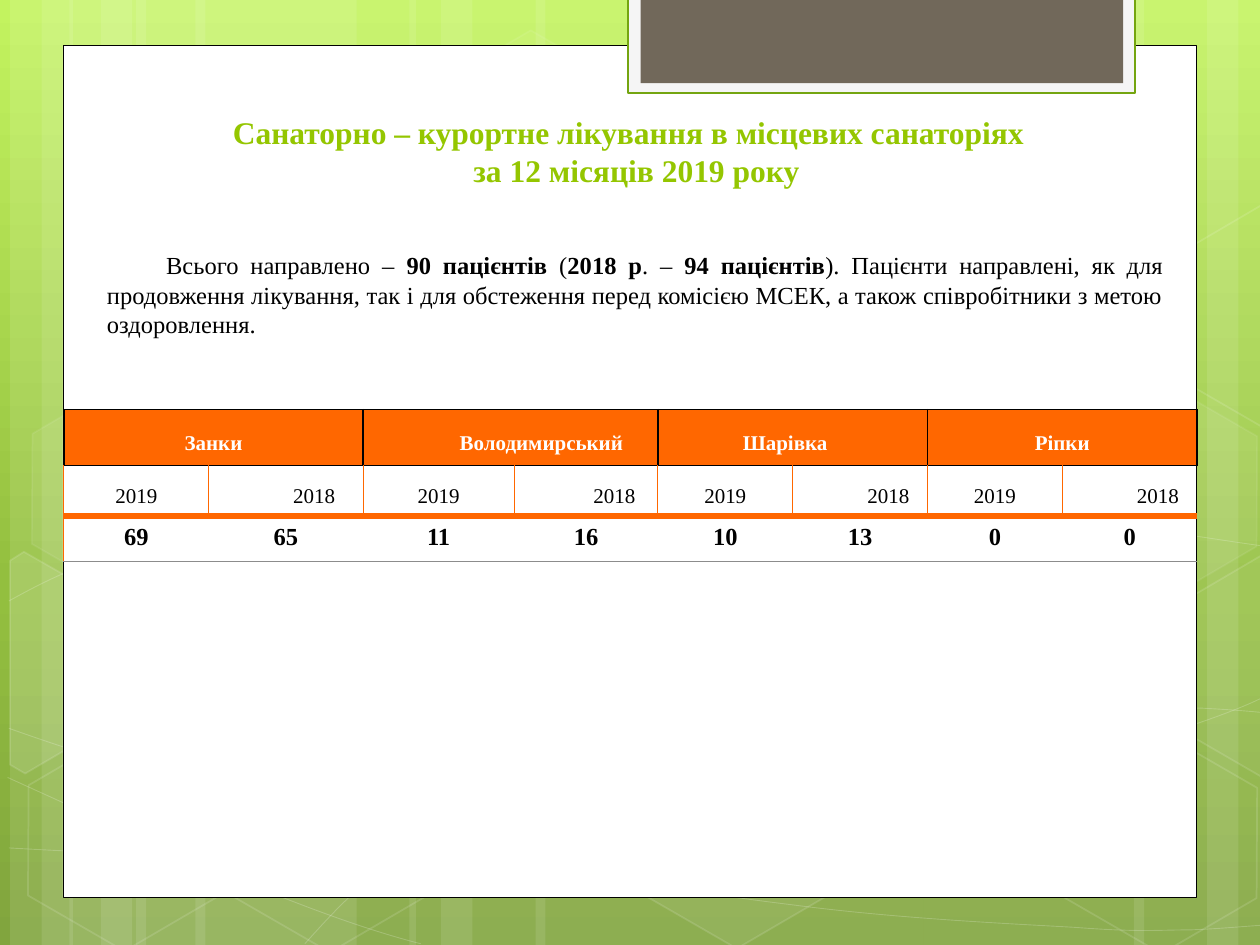
"""Build the slide on sanatorium treatment: green backdrop, white panel, summary and table."""
import copy
import dataclasses

import lxml.etree
import pptx
import pptx.dml.color
import pptx.enum.shapes
import pptx.enum.text
import pptx.oxml.ns
import pptx.util

qn = pptx.oxml.ns.qn
SHAPE = pptx.enum.shapes.MSO_SHAPE
ALIGN = pptx.enum.text.PP_ALIGN
ANCHOR = pptx.enum.text.MSO_ANCHOR
COLUMNS, ROWS = 100, 75


@dataclasses.dataclass(frozen=True)
class Theme:
    font: str = "Times New Roman"
    title_size: int = 18
    body_size: int = 14
    table_size: int = 12
    white: str = "FFFFFF"
    black: str = "000000"
    grey: str = "8C8C8C"
    green: str = "94C600"
    orange: str = "FF6700"
    tab_rim: str = "F5F5F5"
    tab_line: str = "74A510"
    tab: str = "71685A"
    backdrop: tuple = ((0, "C3F35F"), (0.62, "93BF3F"), (1, "81A53E"))


THEME = Theme()

STRIPES = [(10.8, 17.5), (0.8, 5), (3.3, 8.3), (15.5, 17.5), (5.5, 5), (8, 8.3),
           (73.3, 17.5), (95.8, 5), (90, 8.3), (42.5, 30.8), (32.5, 5), (35, 8.3)]
CURVES = [
    [(0.7, 67.3), (6.1, 67.6), (11.5, 67.9), (19, 67.8), (26.5, 67.7), (35.8, 67.5), (45.8, 66.5),
     (55.8, 65.5), (70, 63.6), (79.2, 61.7), (88.3, 59.8), (97.7, 56.8), (100.7, 55.1)],
    [(0.7, 47.7), (3.6, 46.1), (6.5, 44.6), (12.1, 43.1), (17.8, 41.6), (25.9, 39.4), (34.7, 38.7),
     (43.6, 38), (54.4, 37.9), (65.4, 38.7), (76.4, 39.5), (94.7, 42.6), (100.7, 43.4)],
    [(0.6, 61.7), (12.7, 67.2), (24.7, 72.7), (33.4, 74.9)],
    [(0.7, 57.8), (3.8, 58.9), (7, 60), (12.8, 61.6), (18.6, 63.1), (27.3, 65.6), (35.7, 67.3),
     (44, 69), (54.5, 70.8), (62.8, 71.8), (71.1, 72.9), (80, 73.3), (85.3, 73.6),
     (90.5, 74), (91.9, 73.8), (94.5, 73.8), (97.1, 73.7), (98.9, 73.5), (100.7, 73.4)],
    [(24.2, 74.9), (26, 72.9), (27.8, 70.9), (30.2, 69.1), (32.6, 67.3), (36, 65.3), (38.8, 63.9),
     (41.6, 62.5), (43.3, 61.9), (47, 60.9), (50.6, 59.9), (57.3, 58.5), (60.8, 57.8),
     (64.4, 57.1), (64.9, 57.1), (68, 56.9), (71.1, 56.6), (76, 56.3), (79.4, 56.2),
     (82.9, 56.1), (88.6, 56.2), (95.3, 56.2), (97.1, 56.3), (98.8, 56.4), (100.6, 56.6)],
]
HEXAGONS = [(33.4, 3.6, 4, 8), (49.7, 58.9, 6, 12), (1.1, 59.1, 0, 12), (1.4, 31.2, 7, 8),
            (17.4, 59.2, 0, 12), (75.3, 45.3, 10, 12), (83.4, 59.3, 0, 12), (83.4, 31.4, 7, 8)]
CUT_HEXAGONS = [
    (10, [(0.8, 44.5), (1.9, 43.8), (9.6, 48.2), (9.5, 57), (2, 61.4), (0.8, 60.7)]),
    (4, [(92.6, 48.5), (100.1, 44.1), (100.9, 44.6), (100.9, 61.3), (100.2, 61.7), (92.6, 57.3)]),
    (0, [(92.6, 20.7), (100.1, 16.3), (101, 16.8), (100.9, 33.5), (100.2, 33.9), (92.6, 29.5)]),
]
SUMMARY = [("Всього направлено – ", False), ("90 пацієнтів", True), (" (", False), ("2018 р", True),
           (". – ", False), ("94 пацієнтів", True),
           ("). Пацієнти направлені, як для продовження лікування, так і для обстеження перед "
            "комісією МСЕК, а також співробітники з метою оздоровлення.", False)]
RESORTS = [("Занки", 0, 0.7, (69, 65)), ("Володимирський", 4.9, 0.7, (11, 16)),
           ("Шарівка", 0, 1.9, (10, 13)), ("Ріпки", 0, 0.7, (0, 0))]
YEARS = [("2019", 0), ("2018 ", 4.9)]
TABLE_COLUMNS = [11.5, 12.25, 12, 11.4, 10.7, 10.7, 10.7, 10.7]
TABLE_ROWS = [4.43, 4.03, 3.64]


def grid(cells):
    return pptx.util.Inches(cells / 10)


def rgb(color):
    return pptx.dml.color.RGBColor.from_string(color)


def set_alpha(holder, percent):
    if percent < 100:
        color = holder.find(".//" + qn("a:srgbClr"))
        lxml.etree.SubElement(color, qn("a:alpha")).set("val", str(percent * 1000))


def paint(shape, fill=None, fill_alpha=100, line=None, width=1, line_alpha=100):
    shape.shadow.inherit = False
    properties = shape.element.spPr
    if fill and fill_alpha:
        shape.fill.solid()
        shape.fill.fore_color.rgb = rgb(fill)
        set_alpha(properties.find(qn("a:solidFill")), fill_alpha)
    else:
        shape.fill.background()
    if line:
        shape.line.color.rgb = rgb(line)
        shape.line.width = pptx.util.Pt(width)
        set_alpha(properties.find(qn("a:ln")), line_alpha)
    else:
        shape.line.fill.background()


def add_preset(page, kind, box, **look):
    shape = page.shapes.add_shape(kind, *map(grid, box))
    paint(shape, **look)
    return shape


def add_outline(page, points, close, **look):
    start, *rest = [(grid(x), grid(y)) for x, y in points]
    builder = page.shapes.build_freeform(*start, scale=1.0)
    builder.add_line_segments(rest, close=close)
    shape = builder.convert_to_shape()
    paint(shape, **look)
    return shape


def add_curve(page, points, **look):
    shape = add_outline(page, points, False, **look)
    segments = list(shape.element.iter(qn("a:lnTo")))
    for index in range(0, len(segments), 3):
        first, *others = segments[index:index + 3]
        first.tag = qn("a:cubicBezTo")
        for other in others:
            first.append(other[0])
            other.getparent().remove(other)


def set_backdrop(page):
    fill = page.background.fill
    fill.gradient()
    fill.gradient_angle = 270
    stops = page.element.find(".//" + qn("a:gsLst"))
    stops.append(copy.deepcopy(stops[0]))
    for stop, (position, color) in zip(fill.gradient_stops, THEME.backdrop):
        stop.position = position
        stop.color.rgb = rgb(color)


def add_decoration(page):
    white = THEME.white
    for left, width in STRIPES:
        add_preset(page, SHAPE.RECTANGLE, (left, 0, width, ROWS), fill=white, fill_alpha=10)
    for points in CURVES:
        add_curve(page, points, line=white, width=0.5, line_alpha=20)
    for left, top, fill_alpha, line_alpha in HEXAGONS:
        hexagon = add_preset(page, SHAPE.HEXAGON, (left, top, 17.5, 15.2), fill=white,
                             fill_alpha=fill_alpha, line=white, line_alpha=line_alpha)
        hexagon.adjustments[0] = 0.285
        hexagon.rotation = 30
    for fill_alpha, points in CUT_HEXAGONS:
        add_outline(page, points, True, fill=white, fill_alpha=fill_alpha, line=white, line_alpha=12)
    add_preset(page, SHAPE.RECTANGLE, (5, 3.6, 90, 67.65), fill=white, line=THEME.black, width=0.5)
    add_preset(page, SHAPE.RECTANGLE, (49.86, -0.2, 40.24, 7.6), fill=THEME.tab_rim,
               line=THEME.tab_line, width=1.25)
    add_preset(page, SHAPE.RECTANGLE, (50.85, -0.2, 38.3, 6.8), fill=THEME.tab)


def format_para(para, size, color, align, bold=None, indent=0, spacing=None):
    para.alignment = align
    para.line_spacing = spacing
    para.font.name = THEME.font
    para.font.size = pptx.util.Pt(size)
    para.font.color.rgb = rgb(color)
    para.font.bold = bold
    if indent:
        para._p.get_or_add_pPr().set("indent", str(grid(indent)))


def set_title(page, text):
    title = page.shapes.title
    title.element.getparent().append(title.element)
    title.left, title.top, title.width, title.height = map(grid, (0.2, 8.4, COLUMNS, 7.1))
    frame = title.text_frame
    frame.text = text
    frame.auto_size = pptx.enum.text.MSO_AUTO_SIZE.NONE
    frame.vertical_anchor = ANCHOR.BOTTOM
    format_para(frame.paragraphs[0], THEME.title_size, THEME.green, ALIGN.CENTER, bold=True)


def add_summary(page):
    box = page.shapes.add_textbox(*map(grid, (7.5, 19.36, 85.8, 13.1)))
    box.text_frame.word_wrap = True
    para = box.text_frame.paragraphs[0]
    format_para(para, THEME.body_size, THEME.black, ALIGN.JUSTIFY, indent=4.7)
    for text, bold in SUMMARY:
        span = para.add_run()
        span.text = text
        span.font.bold = bold


def fill_cell(cell, text, borders, fill=None, anchor=ANCHOR.MIDDLE, right=0.7, **look):
    cell.text = text
    cell.vertical_anchor = anchor
    cell.margin_left, cell.margin_right = grid(0.7), grid(right)
    cell.margin_top = cell.margin_bottom = 0
    format_para(cell.text_frame.paragraphs[0], align=ALIGN.CENTER, **look)
    properties = cell._tc.get_or_add_tcPr()
    for side in "LRTB":
        color, width = borders.get(side, (None, 0))
        line = lxml.etree.SubElement(properties, qn("a:ln" + side), w=str(pptx.util.Pt(width)))
        paint_kind = lxml.etree.SubElement(line, qn("a:solidFill" if color else "a:noFill"))
        if color:
            lxml.etree.SubElement(paint_kind, qn("a:srgbClr"), val=color)
    if fill:
        cell.fill.solid()
        cell.fill.fore_color.rgb = rgb(fill)
    else:
        cell.fill.background()


def add_resort_table(page):
    box = (5.07, 32.5, sum(TABLE_COLUMNS), sum(TABLE_ROWS))
    table = page.shapes.add_table(len(TABLE_ROWS), len(TABLE_COLUMNS), *map(grid, box)).table
    table.first_row = table.horz_banding = False
    table._tbl.tblPr.find(qn("a:tableStyleId")).text = "{2D5ABB26-0587-4C30-8999-92F81FD0307C}"
    for column, width in zip(table.columns, TABLE_COLUMNS):
        column.width = grid(width)
    for row, height in zip(table.rows, TABLE_ROWS):
        row.height = grid(height)
    black, thin, thick = (THEME.black, 1), (THEME.orange, 0.75), (THEME.orange, 4)
    for group, (name, indent, right, counts) in enumerate(RESORTS):
        first = 2 * group
        table.cell(0, first).merge(table.cell(0, first + 1))
        fill_cell(table.cell(0, first), name, dict.fromkeys("LRTB", black), fill=THEME.orange,
                  right=right, size=THEME.table_size, color=THEME.white, bold=True,
                  indent=indent, spacing=1.5)
        for column, ((year, shift), count) in enumerate(zip(YEARS, counts), first):
            fill_cell(table.cell(1, column), year, {"L": thin, "T": black, "B": thick},
                      size=THEME.table_size, color=THEME.black, indent=shift, spacing=1.5)
            edges = {"T": thick, "B": (THEME.grey, 0.75)}
            if column == 0:
                edges["L"] = thin
            fill_cell(table.cell(2, column), str(count), edges, anchor=ANCHOR.TOP,
                      size=THEME.body_size, color=THEME.black, bold=True, spacing=1.3)


def main():
    deck = pptx.Presentation()
    deck.slide_width, deck.slide_height = grid(COLUMNS), grid(ROWS)
    page = deck.slides.add_slide(deck.slide_layouts[5])
    set_backdrop(page)
    add_decoration(page)
    set_title(page, "Санаторно – курортне лікування в місцевих санаторіях \v за 12 місяців 2019 року")
    add_summary(page)
    add_resort_table(page)
    deck.save("out.pptx")


if __name__ == "__main__":
    main()
